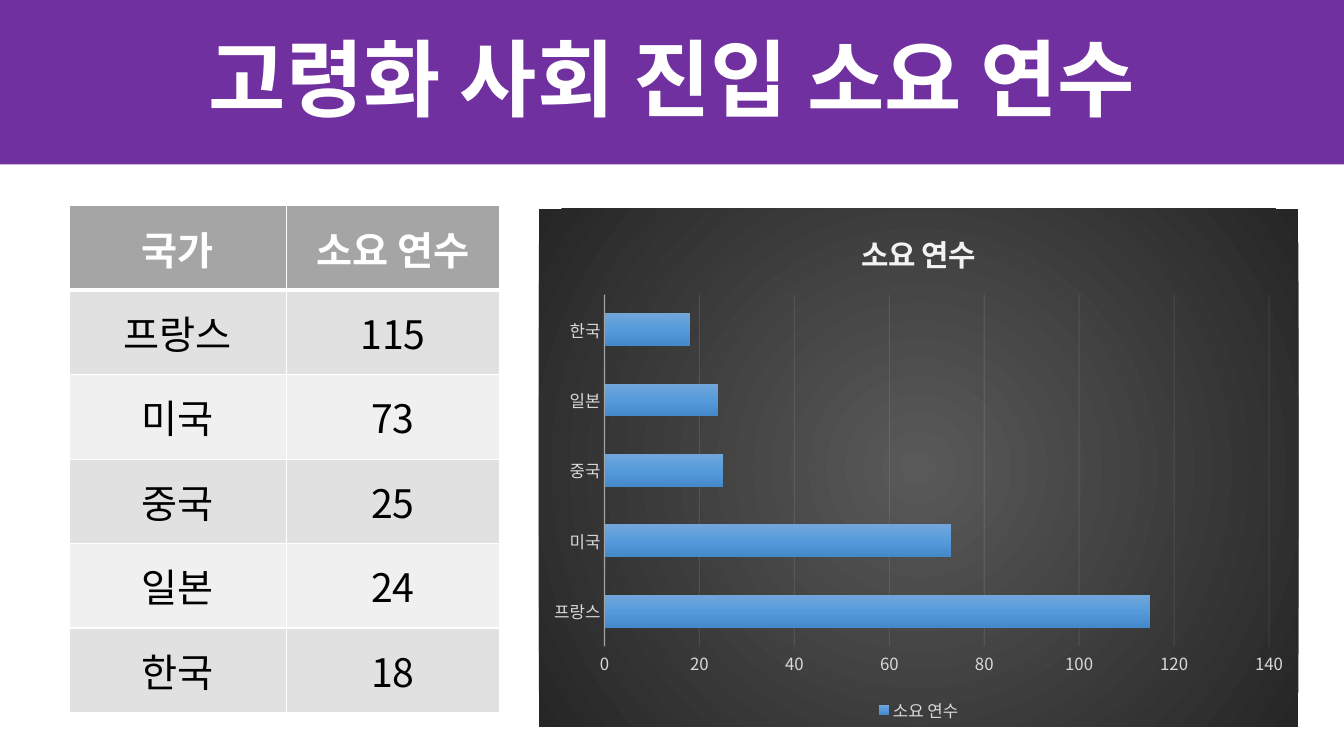
from lxml import etree
from pptx import Presentation
from pptx.chart import data
from pptx.dml.color import RGBColor
from pptx.enum import chart as ch, shapes, text
from pptx.oxml import ns, parse_xml
from pptx.util import Pt

FACE = "Noto Sans CJK KR"
HUES = {
    "band": "7030A0", "white": "FFFFFF", "black": "000000",
    "head": "A5A5A5", "odd": "E1E1E1", "even": "F0F0F0",
    "label": "D9D9D9", "pale": "F2F2F2", "mid": "595959", "dark": "262626",
    "top": "71A6DB", "blue": "559BDB", "base": "448ACA",
}
TITLE = "고령화 사회 진입 소요 연수"
NAME = "소요 연수"
YEARS = {"프랑스": 115, "미국": 73, "중국": 25, "일본": 24, "한국": 18}


def rgb(hue):
    return RGBColor.from_string(HUES[hue])


def style(font, size, hue, bold=False):
    font.name = FACE
    font.size = Pt(size)
    font.bold = bold
    font.color.rgb = rgb(hue)


def write(frame, words, size, hue, bold=False):
    para = frame.paragraphs[0]
    para.alignment = text.PP_ALIGN.CENTER
    run = para.add_run()
    run.text = words
    style(run.font, size, hue, bold)
    return para


def add_asian(root):
    for latin in list(root.iter(ns.qn("a:latin"))):
        asian = etree.Element(ns.qn("a:ea"))
        asian.set("typeface", FACE)
        latin.addnext(asian)


def gradient(hues, shade):
    step = 100000 // (len(hues) - 1)
    stops = "".join(
        f'<a:gs pos="{i * step}"><a:srgbClr val="{HUES[hue]}"/></a:gs>'
        for i, hue in enumerate(hues))
    return parse_xml(
        f'<a:gradFill {ns.nsdecls("a")} rotWithShape="1">'
        f'<a:gsLst>{stops}</a:gsLst>{shade}</a:gradFill>')


def fade_line(line, hue, width, alpha):
    line.color.rgb = rgb(hue)
    line.width = Pt(width)
    color = line.fill._xPr.find(".//" + ns.qn("a:srgbClr"))
    etree.SubElement(color, ns.qn("a:alpha")).set("val", str(alpha * 1000))


def edge_cell(cell, widths):
    props = cell._tc.get_or_add_tcPr()
    for i, (side, width) in enumerate(zip("LRTB", widths)):
        props.insert(i, parse_xml(
            f'<a:ln{side} {ns.nsdecls("a")} w="{Pt(width)}"><a:solidFill>'
            f'<a:srgbClr val="{HUES["white"]}"/></a:solidFill></a:ln{side}>'))


def add_header(slide, x, y, w, h):
    title = slide.shapes.title
    band = slide.shapes.add_shape(
        shapes.MSO_SHAPE.RECTANGLE, Pt(x), Pt(y), Pt(w), Pt(h))
    band.shadow.inherit = False
    band.fill.solid()
    band.fill.fore_color.rgb = rgb("band")
    band.line.fill.background()
    title._element.addprevious(band._element)
    title.left, title.top = Pt(x + 66), Pt(y + 7.2)
    title.width, title.height = Pt(w - 132), Pt(h - 13)
    frame = title.text_frame
    frame.word_wrap = True
    frame.auto_size = text.MSO_AUTO_SIZE.NONE
    frame.vertical_anchor = text.MSO_ANCHOR.MIDDLE
    write(frame, TITLE, 60, "white", True).line_spacing = 0.9


def add_grid(slide, x, y, w, h):
    rows = [("국가", NAME), *YEARS.items()]
    table = slide.shapes.add_table(
        len(rows), 2, Pt(x), Pt(y), Pt(w), Pt(h)).table
    table.columns[0].width = Pt(w / 2 + 1)
    table.columns[1].width = Pt(w / 2 - 1)
    for r, row in enumerate(rows):
        table.rows[r].height = Pt(h / len(rows))
        fill = "head" if r == 0 else "odd" if r % 2 else "even"
        for c, value in enumerate(row):
            cell = table.cell(r, c)
            cell.vertical_anchor = text.MSO_ANCHOR.MIDDLE
            cell.fill.solid()
            cell.fill.fore_color.rgb = rgb(fill)
            edge_cell(cell, (1, 1, 3 if r == 1 else 1, 3 if r == 0 else 1))
            write(cell.text_frame, str(value), 28,
                  "black" if r else "white", r == 0)


def add_bars(slide, x, y, w, h):
    source = data.CategoryChartData()
    source.categories = list(YEARS)
    source.add_series(NAME, list(YEARS.values()))
    chart = slide.shapes.add_chart(
        ch.XL_CHART_TYPE.BAR_CLUSTERED,
        Pt(x), Pt(y), Pt(w), Pt(h), source).chart
    style(chart.font, 10, "black")
    chart.has_title = True
    write(chart.chart_title.text_frame, NAME, 21.3, "pale", True)
    chart.has_legend = True
    chart.legend.position = ch.XL_LEGEND_POSITION.BOTTOM
    chart.legend.include_in_layout = False
    style(chart.legend.font, 12, "label")

    for axis in (chart.category_axis, chart.value_axis):
        axis.major_tick_mark = axis.minor_tick_mark = ch.XL_TICK_MARK.NONE
        style(axis.tick_labels.font, 12, "label")
    fade_line(chart.category_axis.format.line, "pale", 1, 54)
    scale = chart.value_axis
    scale.minimum_scale, scale.maximum_scale, scale.major_unit = 0, 140, 20
    scale.format.line.fill.background()
    fade_line(scale.major_gridlines.format.line, "pale", 0.75, 10)

    plot = chart.plots[0]
    plot.gap_width, plot.overlap, plot.vary_by_categories = 115, -20, False
    bars = plot.series[0]
    bars.format.fill.solid()
    props = bars._element.find(ns.qn("c:spPr"))
    props.replace(props[0], gradient(
        ("top", "blue", "base"), '<a:lin ang="5400000" scaled="0"/>'))

    root = chart._chartSpace
    back = parse_xml(
        f'<c:spPr {ns.nsdecls("c", "a")}><a:ln><a:noFill/></a:ln></c:spPr>')
    back.insert(0, gradient(
        ("mid", "dark"),
        '<a:path path="circle"><a:fillToRect l="50000" t="50000" '
        'r="50000" b="50000"/></a:path>'))
    root.find(ns.qn("c:chart")).addnext(back)
    add_asian(root)


def main():
    deck = Presentation()
    deck.slide_width, deck.slide_height = Pt(960), Pt(540)
    slide = deck.slides.add_slide(deck.slide_layouts[5])
    add_header(slide, 0, 0, 960, 117.4)
    add_grid(slide, 49.8, 147, 307.2, 362)
    add_bars(slide, 385, 149, 542.4, 370)
    add_asian(slide.shapes._spTree)
    deck.save("out.pptx")


if __name__ == "__main__":
    main()
